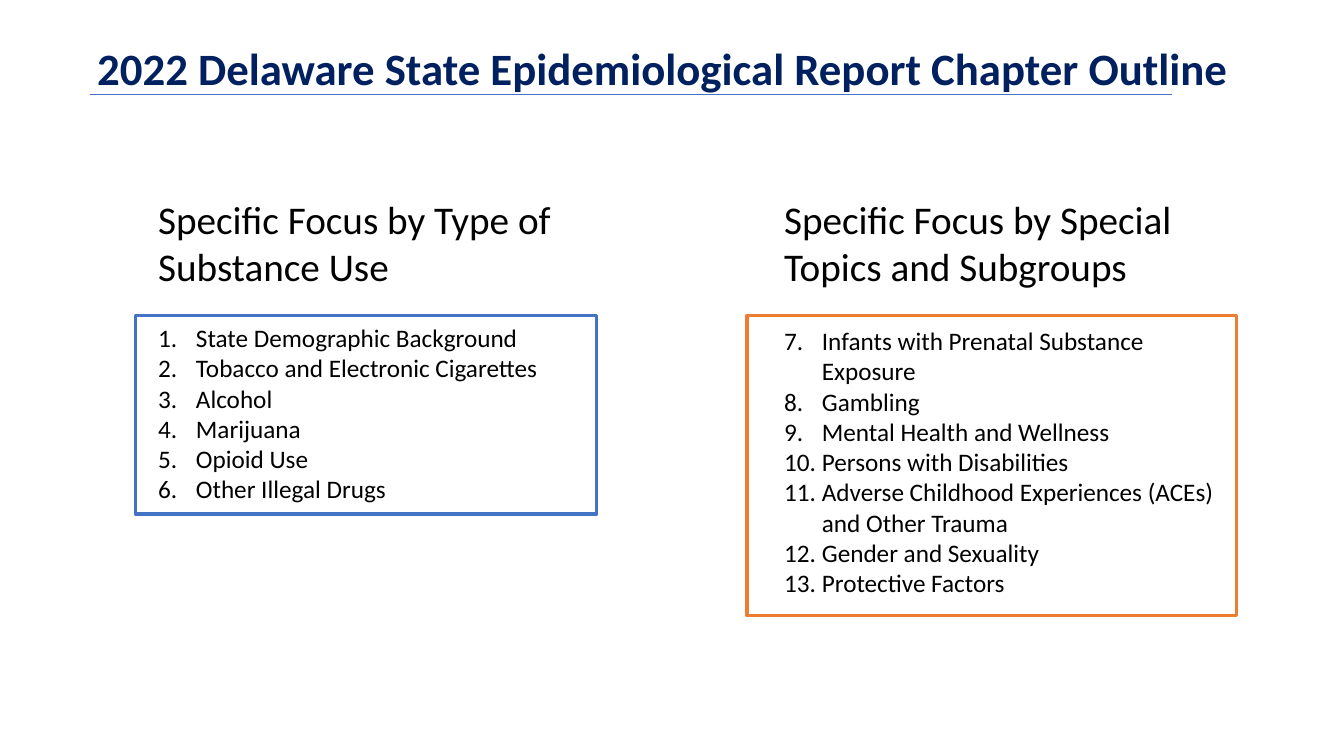
from dataclasses import dataclass

from lxml import etree
from pptx import Presentation
from pptx.dml.color import RGBColor
from pptx.enum.shapes import MSO_CONNECTOR, MSO_SHAPE
from pptx.enum.text import MSO_AUTO_SIZE, PP_ALIGN
from pptx.oxml.ns import qn
from pptx.slide import Slide
from pptx.text.text import TextFrame
from pptx.util import Inches, Length, Pt

RECTANGLE = MSO_SHAPE.RECTANGLE
STRAIGHT = MSO_CONNECTOR.STRAIGHT
GROW = MSO_AUTO_SIZE.SHAPE_TO_FIT_TEXT
LEFT = PP_ALIGN.LEFT
CENTER = PP_ALIGN.CENTER

WIDTH = 13.333
HEIGHT = 7.5
FONT = "Calibri"
BLACK, NAVY, BLUE, ORANGE = "000000", "002060", "4472C4", "ED7D31"
INDENT = Inches(0.375)


@dataclass(frozen=True)
class Area:
    """Left, top, width and height as percentages of the slide."""

    left: float
    top: float
    width: float
    height: float

    def lengths(self) -> tuple[Length, Length, Length, Length]:
        return (across(self.left), down(self.top),
                across(self.width), down(self.height))


@dataclass(frozen=True)
class Section:
    heading: str
    heading_area: Area
    frame_area: Area
    list_area: Area
    color: str
    first_number: int
    chapters: tuple[str, ...]


SECTIONS = (
    Section(
        "Specific Focus by Type of Substance Use",
        Area(11.03, 25.2, 35.1, 13.87),
        Area(10.05, 41.73, 34.35, 26.27),
        Area(11.03, 42, 35.1, 33.6),
        BLUE,
        1,
        ("State Demographic Background", "Tobacco and Electronic Cigarettes",
         "Alcohol", "Marijuana", "Opioid Use", "Other Illegal Drugs"),
    ),
    Section(
        "Specific Focus by Special Topics and Subgroups",
        Area(57.6, 25.2, 34.43, 13.87),
        Area(55.58, 41.73, 36.45, 39.73),
        Area(57.6, 42.4, 35.33, 41.73),
        ORANGE,
        7,
        ("Infants with Prenatal Substance Exposure", "Gambling",
         "Mental Health and Wellness", "Persons with Disabilities",
         "Adverse Childhood Experiences (ACEs) and Other Trauma",
         "Gender and Sexuality", "Protective Factors"),
    ),
)


def across(percent: float) -> Length:
    return Inches(WIDTH * percent / 100)


def down(percent: float) -> Length:
    return Inches(HEIGHT * percent / 100)


def rgb(color: str) -> RGBColor:
    return RGBColor.from_string(color)


def add_text(page: Slide, area: Area, text: str, size: int, color: str = BLACK,
             bold: bool = False, align: PP_ALIGN = LEFT) -> TextFrame:
    frame = page.shapes.add_textbox(*area.lengths()).text_frame
    frame.word_wrap = True
    frame.auto_size = GROW
    frame.text = text
    for para in frame.paragraphs:
        para.alignment = align
        for span in para.runs:
            span.font.name = FONT
            span.font.size = Pt(size)
            span.font.bold = bold
            span.font.color.rgb = rgb(color)
    return frame


def number_paragraphs(frame: TextFrame, first_number: int) -> None:
    for para in frame.paragraphs:
        properties = para._p.get_or_add_pPr()
        properties.set("marL", str(INDENT))
        properties.set("indent", str(-INDENT))
        etree.SubElement(properties, qn("a:buFont"), typeface="+mj-lt")
        etree.SubElement(properties, qn("a:buAutoNum"), type="arabicPeriod",
                         startAt=str(first_number))


def add_frame(page: Slide, area: Area, color: str) -> None:
    box = page.shapes.add_shape(RECTANGLE, *area.lengths())
    box.shadow.inherit = False
    box.fill.background()
    box.line.color.rgb = rgb(color)
    box.line.width = Pt(2.25)


def add_rule(page: Slide, left: float, right: float, top: float) -> None:
    rule = page.shapes.add_connector(
        STRAIGHT, across(left), down(top), across(right), down(top))
    rule.line.color.rgb = rgb(BLUE)
    rule.line.width = Pt(0.5)
    etree.SubElement(rule._element.spPr, qn("a:effectLst"))


def add_section(page: Slide, section: Section) -> None:
    add_frame(page, section.frame_area, section.color)
    add_text(page, section.heading_area, section.heading, 28)
    chapter_list = add_text(
        page, section.list_area, "\n".join(section.chapters), 18)
    number_paragraphs(chapter_list, section.first_number)


def main() -> None:
    deck = Presentation()
    deck.slide_width = Inches(WIDTH)
    deck.slide_height = Inches(HEIGHT)
    page = deck.slides.add_slide(deck.slide_layouts[6])
    for section in SECTIONS:
        add_section(page, section)
    add_text(page, Area(5.63, 4.67, 87.38, 8.53),
             "2022 Delaware State Epidemiological Report Chapter Outline",
             32, NAVY, True, CENTER)
    add_rule(page, 6.68, 87.23, 12.53)
    deck.save("out.pptx")


if __name__ == "__main__":
    main()
